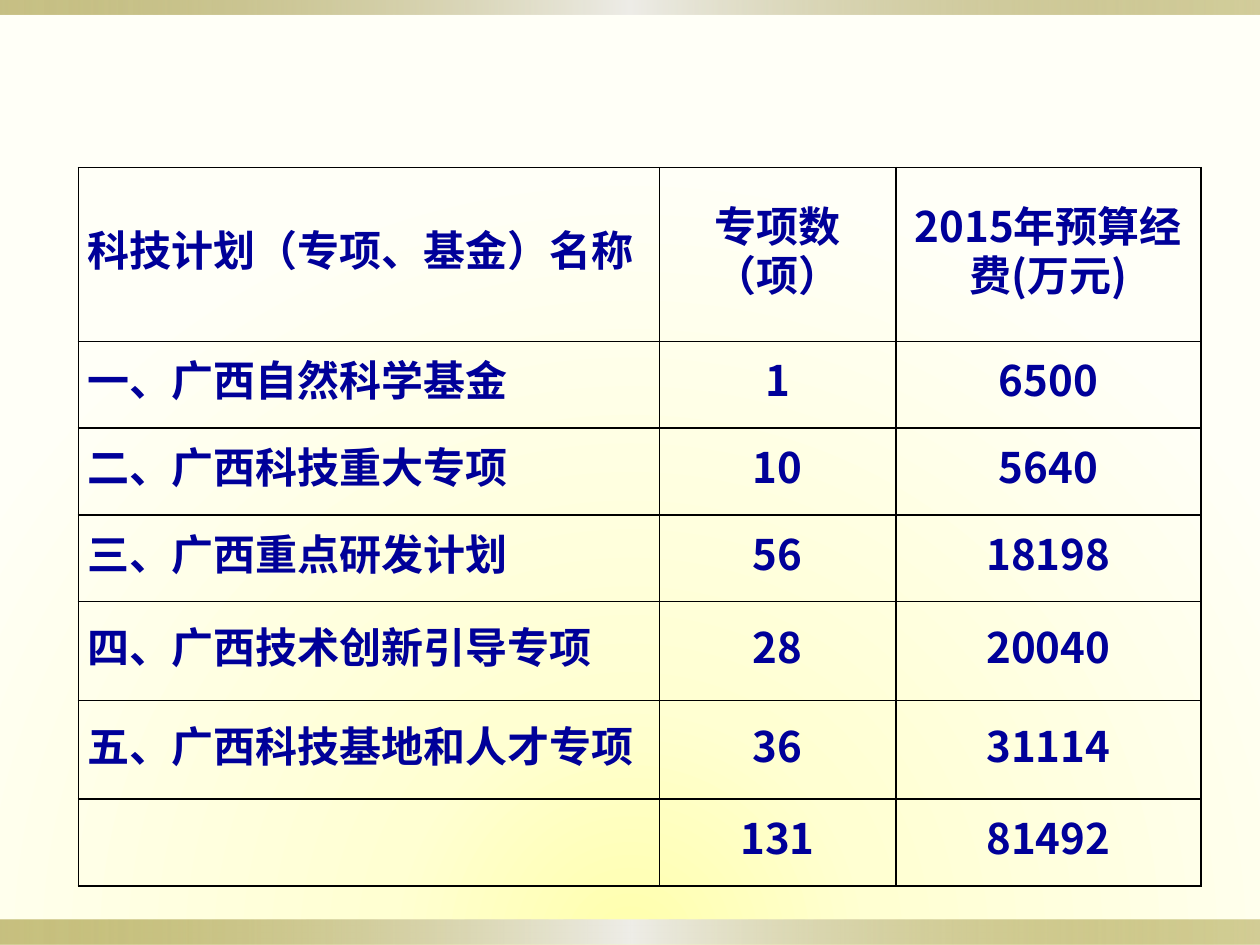
import pptx
import pptx.dml.color
import pptx.enum.shapes
import pptx.enum.text
import pptx.oxml
import pptx.oxml.ns
import pptx.util
from lxml import etree

Cm = pptx.util.Cm
Pt = pptx.util.Pt
ALIGN = pptx.enum.text.PP_ALIGN
qn = pptx.oxml.ns.qn

COLORS = {
    "text": "000099",
    "border": "000000",
    "glow": "FFFFAC",
    "cream": "FFFFD2",
    "ivory": "FFFFF7",
    "gold": "918415",
    "silver": "EEEDE8",
}
FONT = "Noto Sans CJK SC"


def write_text(frame, text, size=24, bold=True, color="text", align=ALIGN.LEFT, spacing=28):
    """Write one formatted paragraph into a text frame."""
    paragraph = frame.paragraphs[0]
    paragraph.alignment = align
    paragraph.line_spacing = Pt(spacing)
    paragraph.font.size = Pt(size)
    if not text:
        return
    run = paragraph.add_run()
    run.text = text
    run.font.size = Pt(size)
    run.font.bold = bold
    run.font.name = FONT
    run.font.color.rgb = pptx.dml.color.RGBColor.from_string(COLORS[color])
    east_asian = etree.SubElement(run.font._element, qn("a:ea"))
    east_asian.set("typeface", FONT)


def set_gradient(parent, stops, direction):
    """Replace the solid fill in parent; stops are (position, colour, opacity)."""
    stop_xml = "".join(
        f'<a:gs pos="{position * 1000}"><a:srgbClr val="{COLORS[color]}">'
        f'<a:alpha val="{opacity * 1000}"/></a:srgbClr></a:gs>'
        for position, color, opacity in stops
    )
    gradient = pptx.oxml.parse_xml(
        f'<a:gradFill {pptx.oxml.ns.nsdecls("a")} rotWithShape="1">'
        f"<a:gsLst>{stop_xml}</a:gsLst>{direction}</a:gradFill>"
    )
    parent.replace(parent.find(qn("a:solidFill")), gradient)


class SlideBuilder:
    def __init__(self, presentation):
        self.width = presentation.slide_width
        self.slide = presentation.slides.add_slide(presentation.slide_layouts[6])

    def background(self):
        self.slide.background.fill.solid()
        set_gradient(
            self.slide.element.find(".//" + qn("p:bgPr")),
            [(0, "glow", 100), (31, "cream", 100), (100, "ivory", 100)],
            '<a:path path="circle">'
            '<a:fillToRect l="50000" t="150000" r="50000" b="0"/></a:path>',
        )

    def band(self, top, height):
        shape = self.slide.shapes.add_shape(
            pptx.enum.shapes.MSO_SHAPE.RECTANGLE, 0, top, self.width, height
        )
        shape.shadow.inherit = False
        shape.line.fill.background()
        shape.fill.solid()
        set_gradient(
            shape.element.spPr,
            [(0, "gold", 50), (50, "silver", 100), (100, "gold", 40)],
            '<a:lin ang="0" scaled="1"/>',
        )

    def cell(self, cell, text, align):
        cell.vertical_anchor = pptx.enum.text.MSO_ANCHOR.MIDDLE
        cell.margin_left = cell.margin_right = Cm(0.18)
        cell.margin_top = cell.margin_bottom = 0
        properties = cell._tc.get_or_add_tcPr()
        for side in ("lnL", "lnR", "lnT", "lnB"):
            line = etree.SubElement(properties, qn("a:" + side), w=str(Pt(1)))
            fill = etree.SubElement(line, qn("a:solidFill"))
            etree.SubElement(fill, qn("a:srgbClr"), val=COLORS["border"])
        cell.fill.background()
        write_text(cell.text_frame, text, align=align)

    def table(self, left, top, widths, heights, rows):
        table = self.slide.shapes.add_table(
            len(rows), len(widths), left, top, sum(widths), sum(heights)
        ).table
        table.first_row = table.horz_banding = False
        for column, width in zip(table.columns, widths):
            column.width = width
        for row, height in zip(table.rows, heights):
            row.height = height
        for row_index, values in enumerate(rows):
            for column_index, text in enumerate(values):
                if column_index:
                    align = ALIGN.CENTER
                else:
                    align = ALIGN.LEFT if row_index else ALIGN.JUSTIFY
                self.cell(table.cell(row_index, column_index), text, align)


def main():
    presentation = pptx.Presentation()
    presentation.slide_width = Cm(25.4)
    presentation.slide_height = Cm(19.05)
    builder = SlideBuilder(presentation)

    # Background and the gold bands at the edges
    builder.background()
    builder.band(Cm(18.55), Cm(0.5))
    builder.band(0, Cm(0.3))

    # Budget table
    builder.table(
        Cm(1.58),
        Cm(3.38),
        [Cm(width) for width in (11.71, 4.77, 6.15)],
        [Cm(height) for height in (3.5, 1.75, 1.75, 1.75, 1.99, 1.99, 1.75)],
        [
            ("科技计划（专项、基金）名称", "专项数（项）", "2015年预算经费(万元)"),
            ("一、广西自然科学基金", "1", "6500"),
            ("二、广西科技重大专项", "10", "5640"),
            ("三、广西重点研发计划", "56", "18198"),
            ("四、广西技术创新引导专项", "28", "20040"),
            ("五、广西科技基地和人才专项", "36", "31114"),
            ("", "131", "81492"),
        ],
    )

    presentation.save("out.pptx")


if __name__ == "__main__":
    main()
